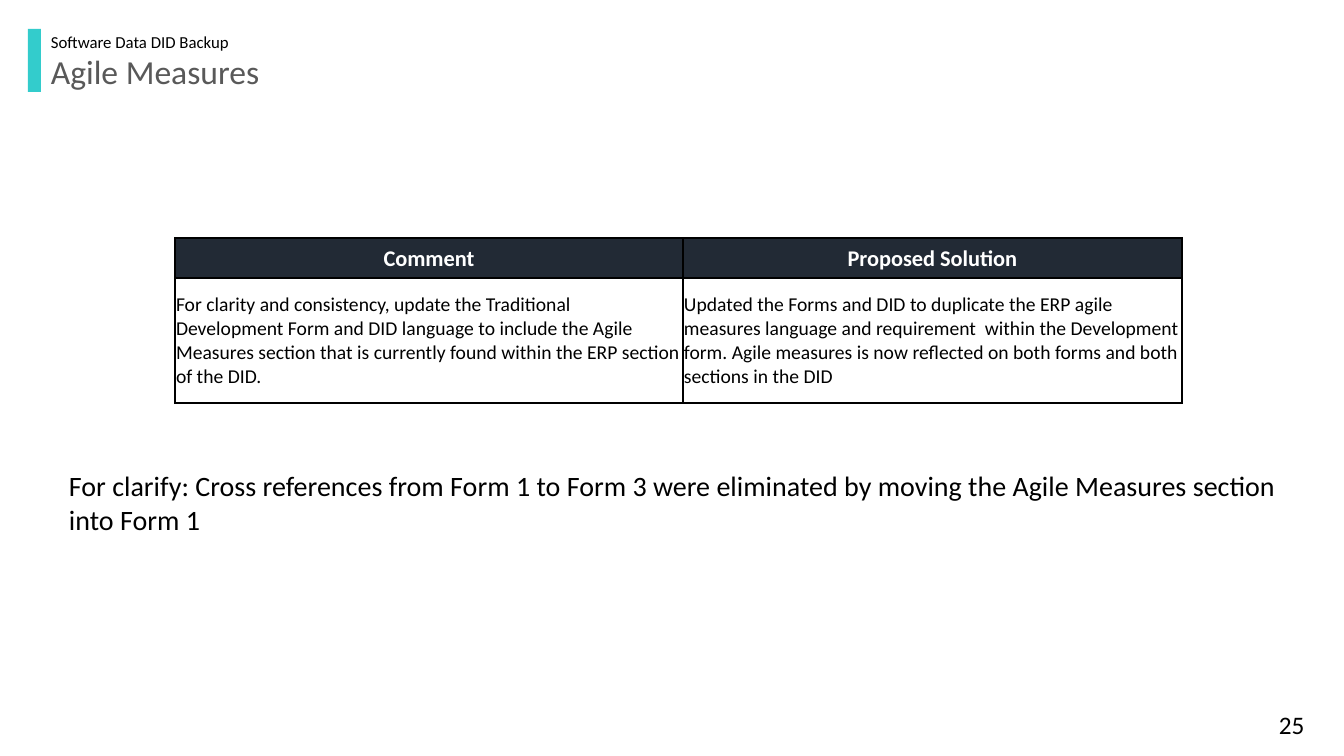
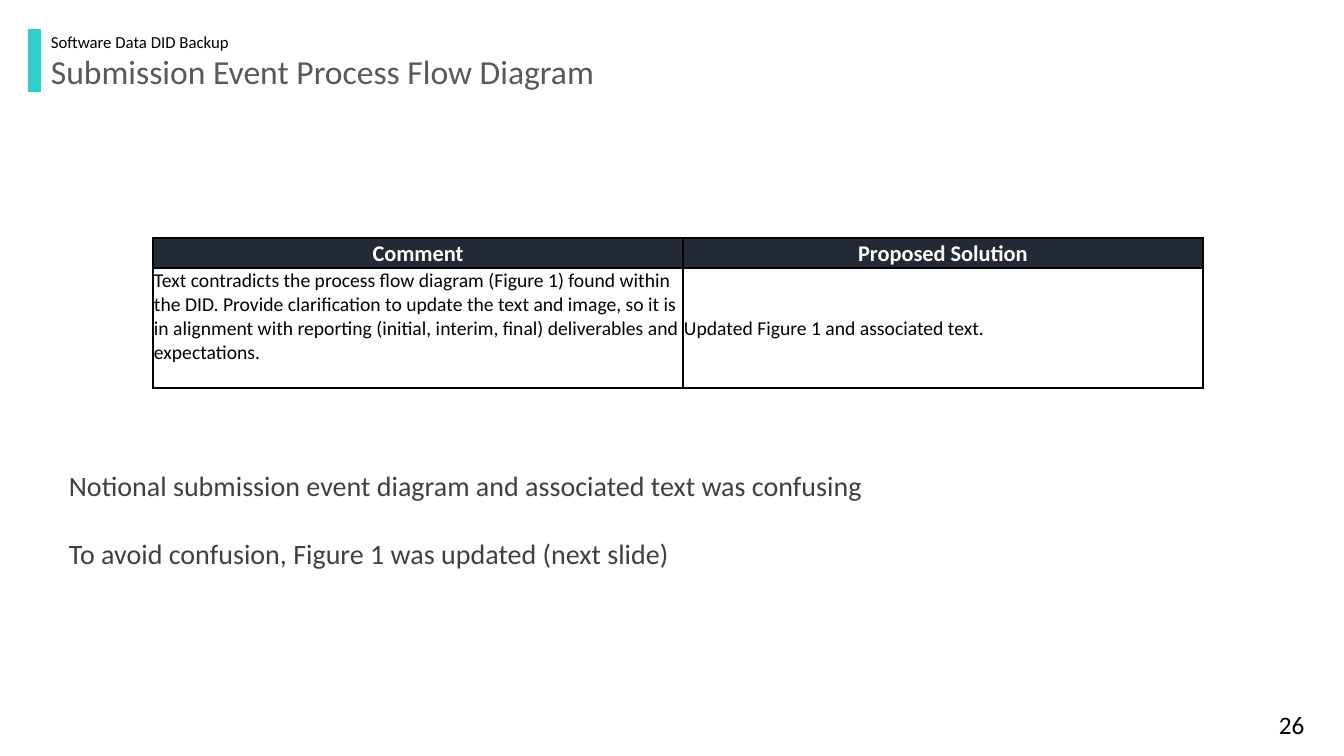
from collections import namedtuple

from lxml import etree
from pptx import Presentation
from pptx.dml.color import RGBColor as Color
from pptx.enum.shapes import MSO_SHAPE as Shape
from pptx.enum.text import MSO_ANCHOR as Anchor, PP_ALIGN as Align
from pptx.oxml.ns import qn
from pptx.util import Pt

EMU_PER_PX = 914400 / 100.8
FONT = "Calibri"
COLORS = {
    "accent": "33CCCC",
    "title": "595959",
    "muted": "404040",
    "header": "222A35",
    "black": "000000",
    "white": "FFFFFF",
}
SECTION = "Software Data DID Backup"
HEADINGS = ("Comment", "Proposed Solution")

Box = namedtuple("Box", "left top width height")
PAGE = Box(0, 0, 1344, 756)
HEADER = Box(28, 29, 984, 79)
NOTE = Box(59, 464, 1272, 78)
TABLE_TOP = 238


def px(length):
    return round(length * EMU_PER_PX)


def emu(box):
    return [px(length) for length in box]


def color(name):
    return Color.from_string(COLORS[name])


def write(frame, text, size=14, ink="black", bold=False, align=Align.LEFT,
          line=1.0, gap=0):
    """Fill a text frame, one paragraph for each line of text."""
    frame.word_wrap = True
    for index, words in enumerate(text.split("\n")):
        para = frame.add_paragraph() if index else frame.paragraphs[0]
        para.alignment = align
        para.line_spacing = line
        if index:
            para.space_before = Pt(gap)
        span = para.add_run()
        span.text = words
        span.font.name = FONT
        span.font.size = Pt(size)
        span.font.bold = bold
        span.font.color.rgb = color(ink)


def add_text(page, box, text, **style):
    write(page.shapes.add_textbox(*emu(box)).text_frame, text, **style)


def add_header(page, box, title):
    # Accent bar, section name and title
    bar = page.shapes.add_shape(
        Shape.RECTANGLE, *emu(Box(box.left, box.top, 13, 63)))
    bar.shadow.inherit = False
    bar.fill.solid()
    bar.fill.fore_color.rgb = color("accent")
    bar.line.fill.background()
    left, width = box.left + 13, box.width - 13
    add_text(page, Box(left, box.top, width, 22), SECTION, size=12, line=0.9)
    add_text(page, Box(left, box.top + 22, width, box.height - 22), title,
             size=24, ink="title", line=0.9)


def add_page_number(page, box, number):
    add_text(page, Box(box.width - 75, box.height - 52, 62, 40), str(number),
             size=18)


def outline(cell):
    properties = cell._tc.get_or_add_tcPr()
    for side in ("lnL", "lnR", "lnT", "lnB"):
        edge = etree.SubElement(properties, qn(f"a:{side}"), w=str(Pt(1)))
        fill = etree.SubElement(edge, qn("a:solidFill"))
        etree.SubElement(fill, qn("a:srgbClr"), val=COLORS["black"])


def add_comment_table(page, left, top, columns, rows, answers, anchors):
    box = Box(left, top, sum(columns), sum(rows))
    table = page.shapes.add_table(2, 2, *emu(box)).table
    for column, width in zip(table.columns, columns):
        column.width = px(width)
    for row, height in zip(table.rows, rows):
        row.height = px(height)

    heading = dict(size=16, ink="white", bold=True, align=Align.CENTER)
    middle = (Anchor.MIDDLE, Anchor.MIDDLE)
    bands = [(HEADINGS, "header", heading, middle),
             (answers, "white", {}, anchors)]
    for row, (texts, fill, style, places) in enumerate(bands):
        for column, (text, anchor) in enumerate(zip(texts, places)):
            cell = table.cell(row, column)
            outline(cell)
            cell.fill.solid()
            cell.fill.fore_color.rgb = color(fill)
            cell.margin_left = cell.margin_right = cell.margin_top = px(1)
            cell.margin_bottom = 0
            cell.vertical_anchor = anchor
            write(cell.text_frame, text, **style)


def add_comment_slide(deck, number, title, columns, rows, answers, note,
                      ink="black", anchors=(Anchor.MIDDLE, Anchor.MIDDLE)):
    page = deck.slides.add_slide(deck.slide_layouts[6])
    add_header(page, HEADER, title)
    add_page_number(page, PAGE, number)
    # The table is centred a little right of the middle of the page
    left = PAGE.width // 2 + 6 - sum(columns) // 2
    add_comment_table(page, left, TABLE_TOP, columns, rows, answers, anchors)
    add_text(page, NOTE, note, size=20, ink=ink, gap=24)


def main():
    deck = Presentation()
    deck.slide_width, deck.slide_height = px(PAGE.width), px(PAGE.height)

    add_comment_slide(
        deck, 25, "Agile Measures", (508, 499), (40, 125),
        ("For clarity and consistency, update the Traditional Development "
         "Form and DID language to include the Agile Measures section that "
         "is currently found within the ERP section of the DID.",
         "Updated the Forms and DID to duplicate the ERP agile measures "
         "language and requirement  within the Development form. Agile "
         "measures is now reflected on both forms and both sections in "
         "the DID"),
        "For clarify: Cross references from Form 1 to Form 3 were eliminated "
        "by moving the Agile Measures section into Form 1")

    add_comment_slide(
        deck, 26, "Submission Event Process Flow Diagram", (530, 520),
        (30, 120),
        ("Text contradicts the process flow diagram (Figure 1) found within "
         "the DID. Provide clarification to update the text and image, so it "
         "is in alignment with reporting (initial, interim, final) "
         "deliverables and expectations.",
         "Updated Figure 1 and associated text."),
        "Notional submission event diagram and associated text was confusing\n"
        "To avoid confusion, Figure 1 was updated (next slide)",
        ink="muted", anchors=(Anchor.TOP, Anchor.MIDDLE))

    deck.save("out.pptx")


if __name__ == "__main__":
    main()
